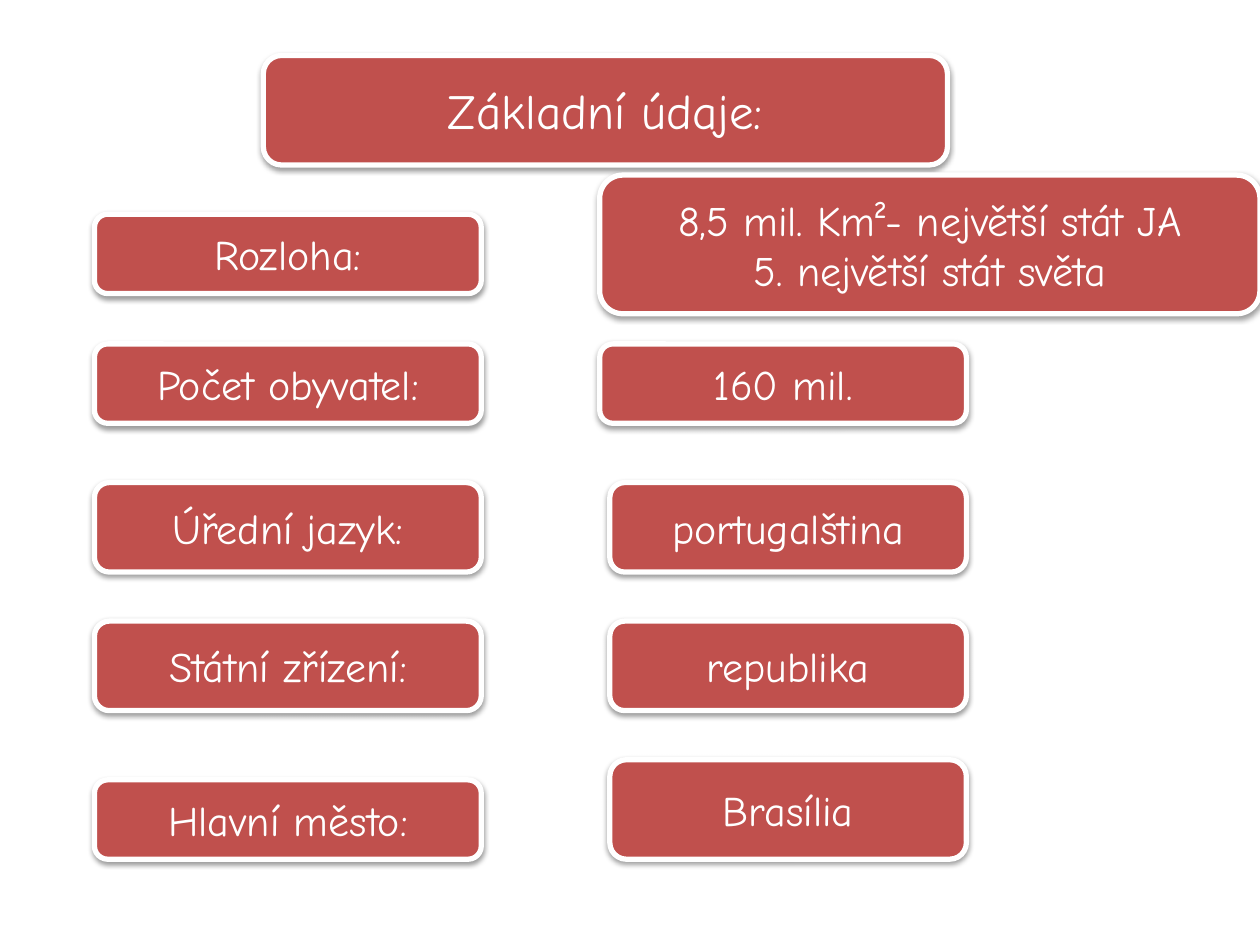
"""Build a slide of basic facts as label and value boxes."""
from lxml.etree import SubElement
from pptx import Presentation
from pptx.dml.color import RGBColor
from pptx.enum.shapes import MSO_SHAPE
from pptx.enum.text import MSO_ANCHOR, PP_ALIGN
from pptx.oxml.ns import qn
from pptx.util import Inches, Pt


def color(code):
    return RGBColor.from_string(code)


def add_box(left, top, width, height, lines, size=24):
    box = slide.shapes.add_shape(
        MSO_SHAPE.ROUNDED_RECTANGLE,
        int(left * col), int(top * row), int(width * col), int(height * row))
    box.fill.solid()
    box.fill.fore_color.rgb = color("C0504D")
    box.line.color.rgb = color("FFFFFF")
    box.line.width = Pt(3)
    box.shadow.inherit = False
    effects = box._element.spPr.find(qn("a:effectLst"))
    shade = SubElement(effects, qn("a:outerShdw"), blurRad=str(Pt(3.1)),
                       dist=str(Pt(1.6)), dir="5400000", rotWithShape="0")
    black = SubElement(shade, qn("a:srgbClr"), val="000000")
    SubElement(black, qn("a:alpha"), val="38000")
    frame = box.text_frame
    frame.word_wrap = True
    frame.vertical_anchor = MSO_ANCHOR.MIDDLE
    for i, line in enumerate(lines):
        para = frame.paragraphs[0] if i == 0 else frame.add_paragraph()
        para.alignment = PP_ALIGN.CENTER
        run = para.add_run()
        run.text = line
        run.font.name = "Comic Neue"
        run.font.size = Pt(size)
        run.font.color.rgb = color("FFFFFF")


deck = Presentation()
deck.slide_width, deck.slide_height = Inches(10), Inches(7.5)
slide = deck.slides.add_slide(deck.slide_layouts[6])
col, row = deck.slide_width / 100, deck.slide_height / 100

add_box(20.9, 5.87, 54.3, 11.6, ["Základní údaje:"], 28)

facts = [
    ("Rozloha:", 22.67, 8.4,
     ["8,5 mil. Km²- největší stát JA", "5. největší stát světa"],
     47.6, 18.53, 52.4, 14.67),
    ("Počet obyvatel:", 36.4, 8.4, ["160 mil."], 47.6, 36.4, 29.1, 8.4),
    ("Úřední jazyk:", 51.07, 9.47, ["portugalština"], 48.4, 51.07, 28.3, 9.47),
    ("Státní zřízení:", 65.73, 9.47, ["republika"], 48.4, 65.73, 28.3, 9.47),
    ("Hlavní město:", 82.53, 8.4, ["Brasília"], 48.4, 80.4, 28.3, 10.53),
]
for label, top, height, value, *place in facts:
    add_box(7.5, top, 30.7, height, [label])
    add_box(*place, value)

deck.save("out.pptx")
